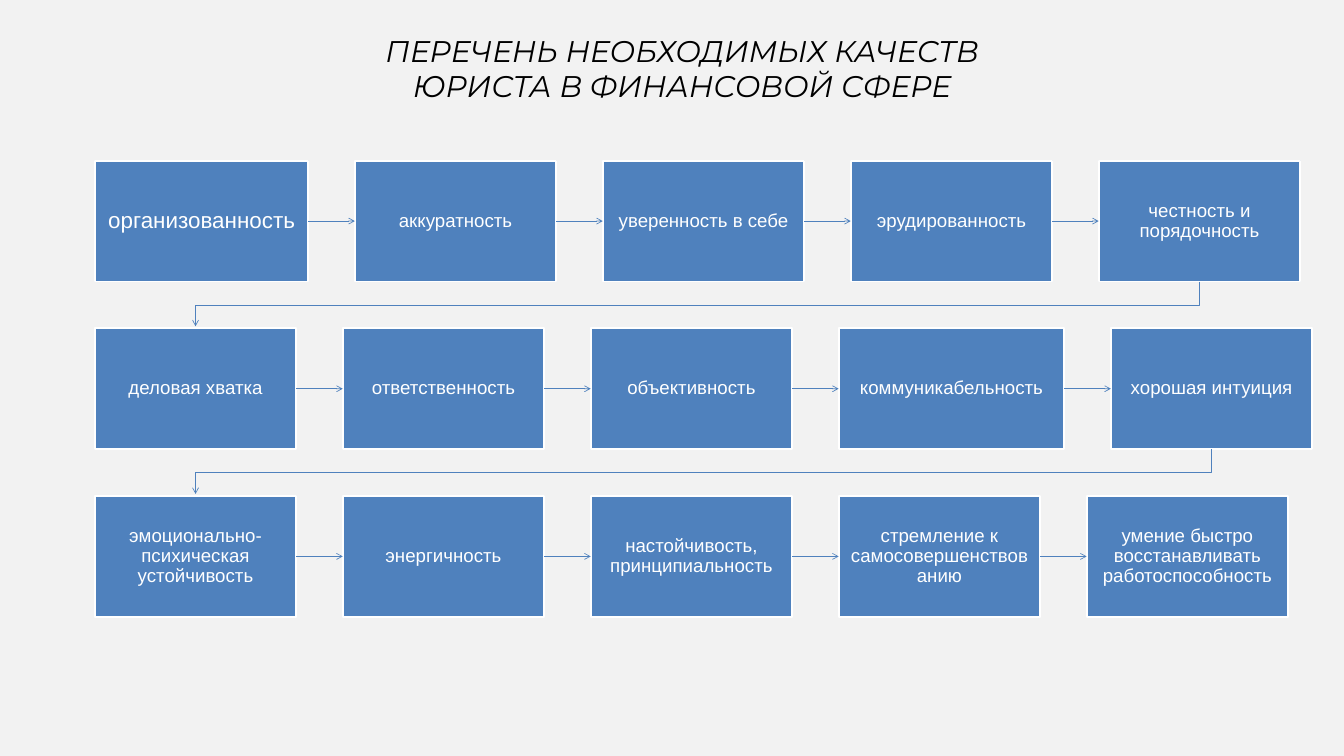
from lxml import etree
from pptx import Presentation
from pptx.dml.color import RGBColor
from pptx.enum.shapes import MSO_CONNECTOR, MSO_SHAPE
from pptx.enum.text import MSO_ANCHOR, MSO_AUTO_SIZE, PP_ALIGN
from pptx.oxml.ns import qn
from pptx.util import Inches, Pt

RECT = MSO_SHAPE.RECTANGLE
STRAIGHT = MSO_CONNECTOR.STRAIGHT
CENTER = PP_ALIGN.CENTER
TOP, MIDDLE = MSO_ANCHOR.TOP, MSO_ANCHOR.MIDDLE
NO_AUTOFIT = MSO_AUTO_SIZE.NONE

BACKGROUND, BLUE, WHITE, BLACK = "F2F2F2", "4F81BD", "FFFFFF", "000000"
LEFT, FIRST_TOP, ROW_PITCH = 1.41, 2.39, 2.495
BOX_W, BOX_H, GAP = 3, 1.8, 0.69
INSET, TIP_GAP, BEND = 0.15, 0.03, 0.35

TITLE = ["ПЕРЕЧЕНЬ НЕОБХОДИМЫХ КАЧЕСТВ ", "ЮРИСТА В ФИНАНСОВОЙ СФЕРЕ "]
ROWS = [
    ["организованность", "аккуратность", "уверенность в себе",
     "эрудированность", "честность и порядочность"],
    ["деловая хватка", "ответственность", "объективность",
     "коммуникабельность", "хорошая интуиция"],
    ["эмоционально-психическая устойчивость", "энергичность",
     "настойчивость, принципиальность", "стремление к самосовершенствованию",
     "умение быстро восстанавливать работоспособность"],
]
# Boxes that differ from the standard width or text size
WIDTHS = {"организованность": 3.18, "коммуникабельность": 3.36}
SIZES = {"организованность": 24}


def rgb(value):
    return RGBColor.from_string(value)


def format_text(tf, font, size, color, italic=False):
    for p in tf.paragraphs:
        p.alignment = CENTER
        for r in p.runs:
            r.font.name = font
            r.font.size = Pt(size)
            r.font.italic = italic
            r.font.color.rgb = rgb(color)


def add_title(s):
    sp = s.shapes.title
    sp.left, sp.top = Inches(1.38), Inches(0.43)
    sp.width, sp.height = Inches(17.66), Inches(1.18)
    tf = sp.text_frame
    tf.text = "\n".join(TITLE)
    tf.word_wrap = True
    tf.auto_size = NO_AUTOFIT
    tf.vertical_anchor = TOP
    format_text(tf, "Montserrat", 32, BLACK, italic=True)


def add_box(s, text, x, y, w):
    sp = s.shapes.add_shape(RECT, Inches(x), Inches(y), Inches(w), Inches(BOX_H))
    sp.shadow.inherit = False
    sp.fill.solid()
    sp.fill.fore_color.rgb = rgb(BLUE)
    sp.line.color.rgb = rgb(WHITE)
    sp.line.width = Pt(2)
    tf = sp.text_frame
    tf.text = text
    tf.word_wrap = True
    tf.vertical_anchor = MIDDLE
    tf.margin_left = tf.margin_right = Inches(INSET)
    tf.margin_top = tf.margin_bottom = Inches(INSET)
    tf.paragraphs[0].line_spacing = 0.9
    format_text(tf, "Arial", SIZES.get(text, 20), WHITE)
    return sp


def style_arrow(sp):
    sp.line.color.rgb = rgb(BLUE)
    sp.line.width = Pt(0.75)
    etree.SubElement(sp.line._get_or_add_ln(), qn("a:tailEnd"), type="arrow")


def add_arrow(s, start, end):
    arrow = s.shapes.add_connector(STRAIGHT, 0, 0, 0, 0)
    arrow.begin_connect(start, 3)
    arrow.end_connect(end, 1)
    style_arrow(arrow)
    etree.SubElement(arrow._element.spPr, qn("a:effectLst"))


def add_row_turn(s, last, first):
    """Bent arrow from the last box of a row to the first of the next."""
    x1, y1 = last.left + last.width // 2, last.top + last.height
    x2, y2 = first.left + first.width // 2, first.top - Inches(TIP_GAP)
    bend = y1 + Inches(BEND)
    builder = s.shapes.build_freeform(x1, y1)
    builder.add_line_segments([(x1, bend), (x2, bend), (x2, y2)], close=False)
    sp = builder.convert_to_shape()
    sp.shadow.inherit = False
    sp.fill.background()
    style_arrow(sp)


def add_row(s, texts, y):
    boxes = []
    x = LEFT
    for text in texts:
        w = WIDTHS.get(text, BOX_W)
        boxes.append(add_box(s, text, x, y, w))
        x += w + GAP
    for start, end in zip(boxes, boxes[1:]):
        add_arrow(s, start, end)
    return boxes


def main():
    prs = Presentation()
    prs.slide_width, prs.slide_height = Inches(20), Inches(11.25)
    s = prs.slides.add_slide(prs.slide_layouts[5])
    s.background.fill.solid()
    s.background.fill.fore_color.rgb = rgb(BACKGROUND)

    add_title(s)

    # Rows of qualities, then the arrows that lead from row to row
    rows = [add_row(s, texts, FIRST_TOP + i * ROW_PITCH)
            for i, texts in enumerate(ROWS)]
    for upper, lower in zip(rows, rows[1:]):
        add_row_turn(s, upper[-1], lower[0])

    prs.save("out.pptx")


if __name__ == "__main__":
    main()
